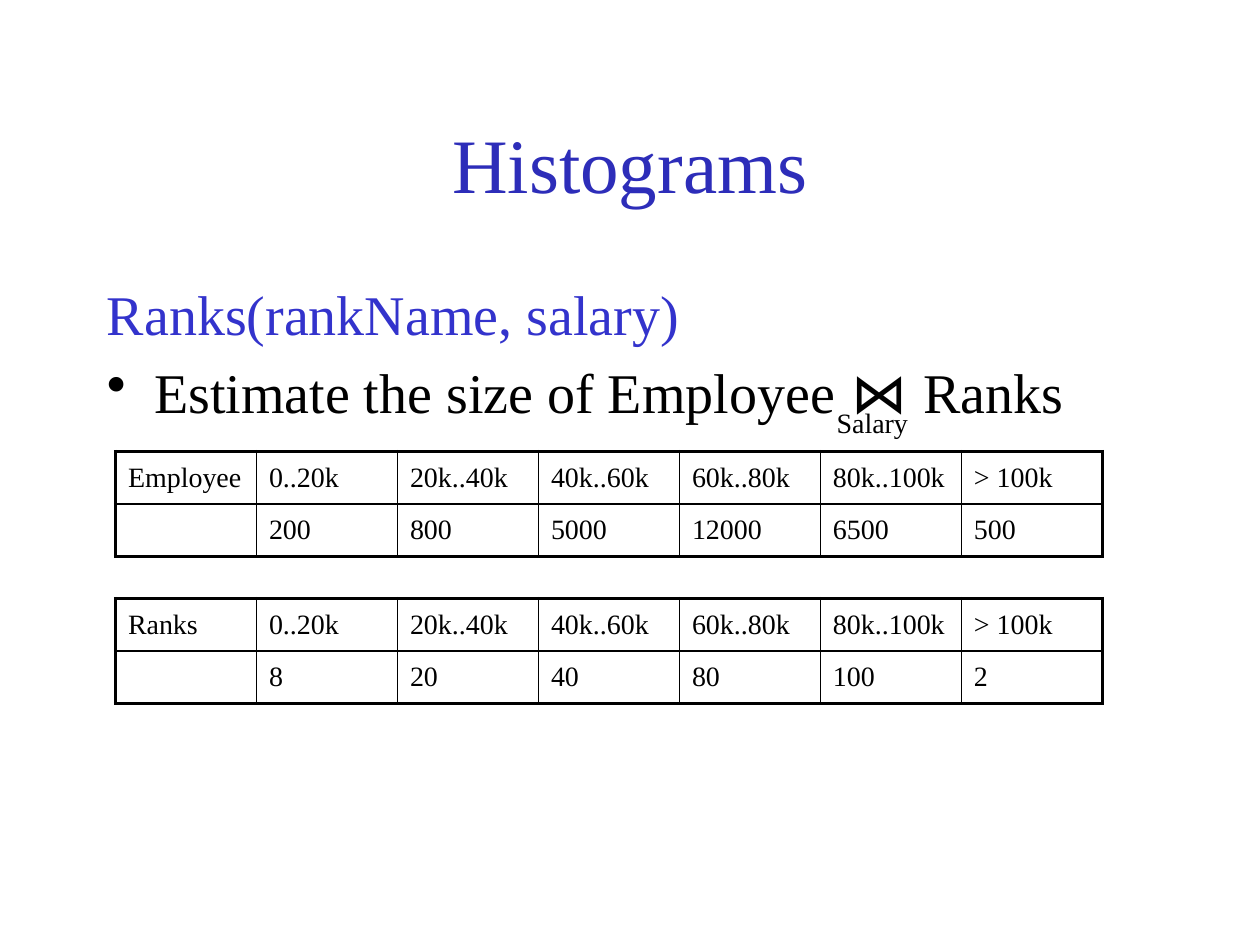
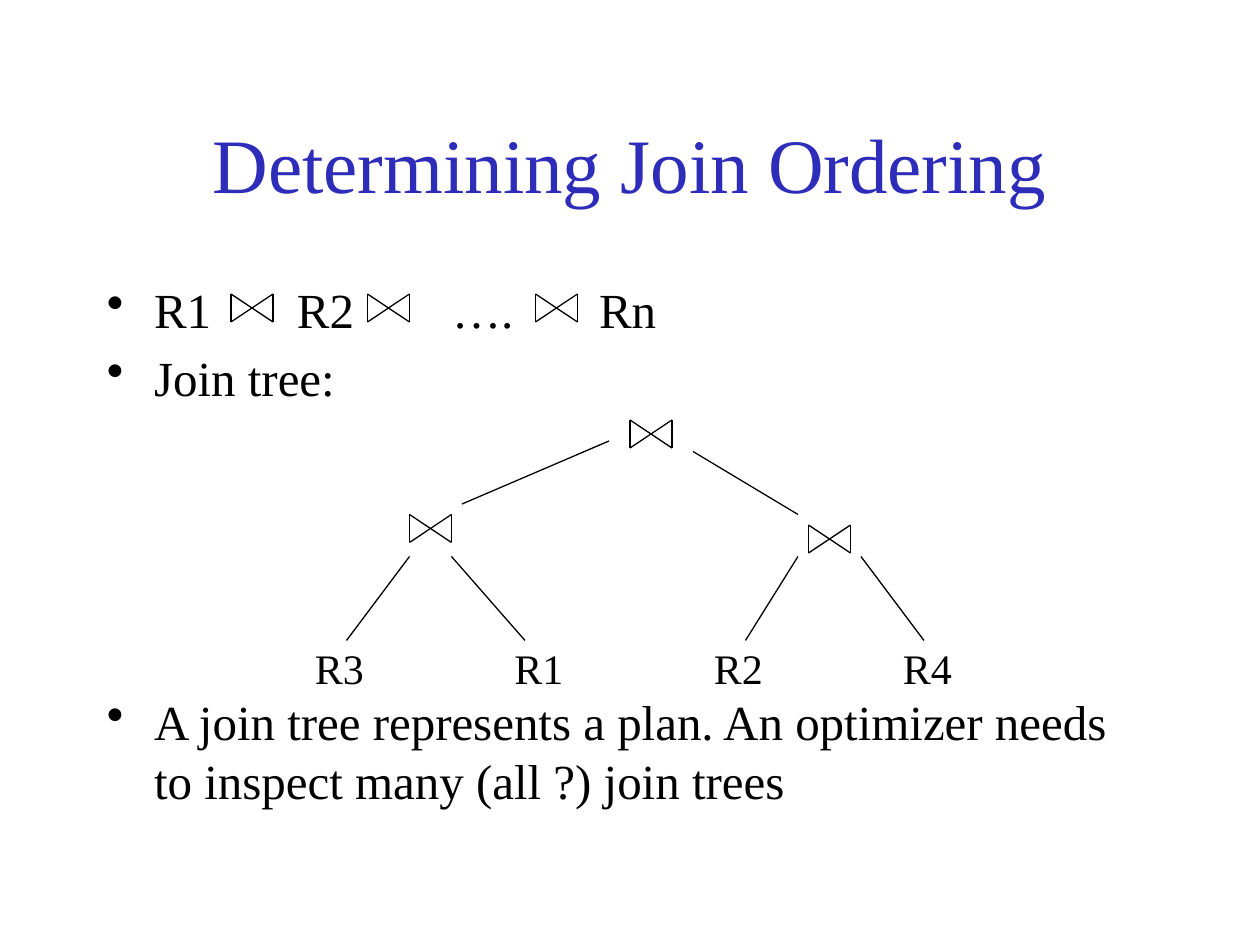
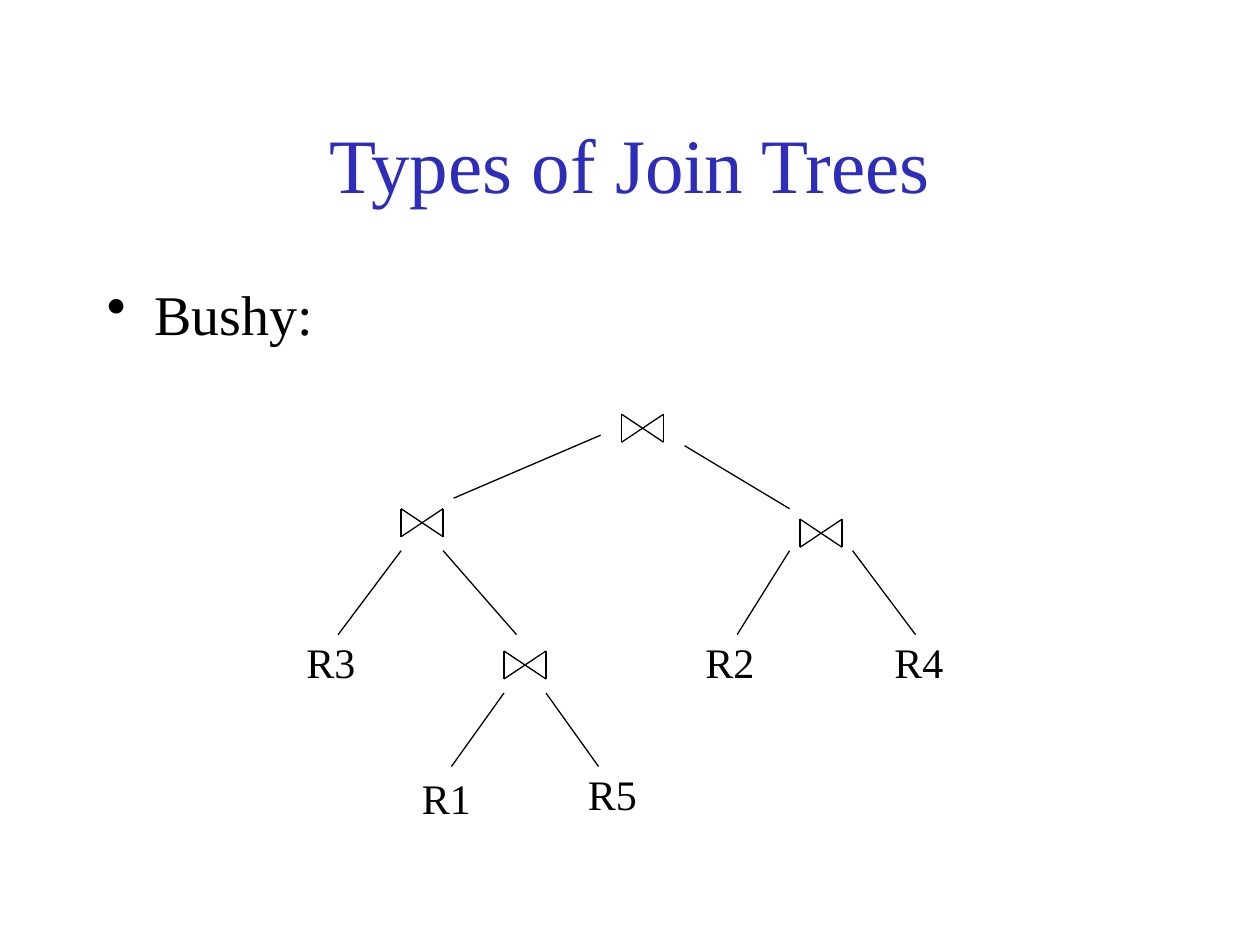
from dataclasses import dataclass
from typing import NamedTuple, Union

from lxml.etree import SubElement
from pptx import Presentation
from pptx.dml.color import RGBColor
from pptx.enum.shapes import MSO_CONNECTOR
from pptx.enum.text import MSO_ANCHOR, PP_ALIGN
from pptx.oxml.ns import qn
from pptx.shapes.shapetree import GroupShapes, SlideShapes
from pptx.slide import Slide
from pptx.util import Emu, Inches, Pt

# Shared look
TITLE_BLUE = RGBColor(0x2D, 0x2D, 0xB9)
BODY_BLUE = RGBColor(0x33, 0x33, 0xCC)
BLACK = RGBColor(0x00, 0x00, 0x00)
SERIF, SANS = "Times New Roman", "Arial"
SPACE_SHARE = 0.2  # space before a paragraph, as a share of its text size
THIN, THICK = 1, 2.25

# Grid of 120 columns and 90 rows
WIDTH, HEIGHT = Inches(10), Inches(7.5)
COLUMNS, ROWS = 120, 90
JOIN_W, JOIN_H = 4, 2.67


class Point(NamedTuple):
    col: float
    row: float

    def shifted(self, by: "Point") -> "Point":
        return Point(self.col + by.col, self.row + by.row)


class Box(NamedTuple):
    col: float
    row: float
    cols: float
    rows: float


class Run(NamedTuple):
    text: str
    font: str = SERIF
    spacing: float = 0


class Label(NamedTuple):
    text: str
    at: Point


class Edge(NamedTuple):
    start: Point
    end: Point


@dataclass
class Para:
    runs: list[Run]
    size: float
    color: RGBColor = BLACK
    bullet: bool = True
    before: float = 0


@dataclass
class JoinTree:
    joins: list[Point]
    edges: list[Edge]
    leaves: list[Label]


Shapes = Union[SlideShapes, GroupShapes]

TITLE_BOX = Box(9, 8, 102, 15)
BODY_BOX = Box(9, 26, 102, 54)


def x(cols: float) -> Emu:
    return Emu(round(WIDTH * cols / COLUMNS))


def y(rows: float) -> Emu:
    return Emu(round(HEIGHT * rows / ROWS))


def place(box: Box) -> tuple[Emu, Emu, Emu, Emu]:
    return x(box.col), y(box.row), x(box.cols), y(box.rows)


# Text
def add_run(p, run: Run, size: float, color: RGBColor = BLACK) -> None:
    r = p.add_run()
    r.text = run.text
    for name, value in {"name": run.font, "size": Pt(size), "bold": False}.items():
        setattr(r.font, name, value)
    r.font.color.rgb = color
    if run.spacing:
        r.font._element.set("spc", str(round(run.spacing * 100)))


def add_text_frame(s: Slide, box: Box, **formats):
    tf = s.shapes.add_textbox(*place(box)).text_frame
    for name, value in formats.items():
        setattr(tf, name, value)
    return tf


def add_label(s: Slide, label: Label, size: float = 24, cols: float = 7.1, rows: float = 6) -> None:
    tf = add_text_frame(s, Box(*label.at, cols, rows), word_wrap=False)
    add_run(tf.paragraphs[0], Run(label.text), size)


def add_title(s: Slide, text: str) -> None:
    tf = add_text_frame(s, TITLE_BOX, word_wrap=True, vertical_anchor=MSO_ANCHOR.MIDDLE)
    p = tf.paragraphs[0]
    p.alignment = PP_ALIGN.CENTER
    add_run(p, Run(text), 44, TITLE_BLUE)


def add_body(s: Slide, paras: list[Para]) -> None:
    tf = add_text_frame(s, BODY_BOX, word_wrap=True)
    for i, para in enumerate(paras):
        p = tf.add_paragraph() if i else tf.paragraphs[0]
        p.space_before = Pt(para.before or para.size * SPACE_SHARE)
        pPr = p._p.get_or_add_pPr()
        indent = x(4.5)
        pPr.set("marL", str(indent))
        pPr.set("indent", str(-indent))
        if para.bullet:
            SubElement(pPr, qn("a:buChar")).set("char", "•")
        for run in para.runs:
            add_run(p, run, para.size, para.color)


# Lines and joins
def add_line(shapes: Shapes, edge: Edge) -> None:
    (x1, y1), (x2, y2) = edge
    line = shapes.add_connector(MSO_CONNECTOR.STRAIGHT, x(x1), y(y1), x(x2), y(y2))
    line.line.color.rgb = BLACK
    line.line.width = Pt(0.75)
    SubElement(line._element.spPr, qn("a:effectLst"))


def add_join(s: Slide, at: Point) -> None:
    top_right, bottom_left = at.shifted(Point(JOIN_W, 0)), at.shifted(Point(0, JOIN_H))
    bottom_right = at.shifted(Point(JOIN_W, JOIN_H))
    outline = [at, bottom_right, top_right, bottom_left, at]
    group = s.shapes.add_group_shape()
    for start, end in zip(outline, outline[1:]):
        add_line(group.shapes, Edge(start, end))


def add_tree(s: Slide, tree: JoinTree, shift: Point = Point(0, 0)) -> None:
    for leaf in tree.leaves:
        add_label(s, Label(leaf.text, leaf.at.shifted(shift)))
    for join in tree.joins:
        add_join(s, join.shifted(shift))
    for edge in tree.edges:
        add_line(s.shapes, Edge(edge.start.shifted(shift), edge.end.shifted(shift)))


# Histogram table
def set_borders(cell, widths: dict[str, float]) -> None:
    tcPr = cell._tc.get_or_add_tcPr()
    for side, width in widths.items():
        ln = SubElement(tcPr, qn(f"a:ln{side}"))
        ln.set("w", str(Pt(width)))
        SubElement(SubElement(ln, qn("a:solidFill")), qn("a:srgbClr")).set("val", str(BLACK))


def add_histogram(s: Slide, row: float, rows: list[list[str]]) -> None:
    n_rows, n_cols = len(rows), len(rows[0])
    box = Box(11, row, 94, 5 * n_rows)
    table = s.shapes.add_table(n_rows, n_cols, *place(box)).table
    for name in ("first_row", "horz_banding"):
        setattr(table, name, False)
    for i, texts in enumerate(rows):
        for j, text in enumerate(texts):
            cell = table.cell(i, j)
            outer = {"L": j == 0, "R": j == n_cols - 1, "T": i == 0, "B": i == n_rows - 1}
            set_borders(cell, {side: THICK if edge else THIN for side, edge in outer.items()})
            cell.fill.background()
            cell.vertical_anchor = MSO_ANCHOR.MIDDLE
            if text:
                p = cell.text_frame.paragraphs[0]
                p.space_before = Pt(16 * SPACE_SHARE)
                add_run(p, Run(text), 16)


# Content
RANGES = ["0..20k", "20k..40k", "40k..60k", "60k..80k", "80k..100k", "> 100k"]
HISTOGRAMS = {
    "Employee": [200, 800, 5000, 12000, 6500, 500],
    "Ranks": [8, 20, 40, 80, 100, 2],
}
LEFT_LEAF, RIGHT_LEAVES = Label("R3", Point(28.8, 60.6)), [
    Label("R2", Point(66.8, 60.6)),
    Label("R4", Point(84.8, 60.6)),
]
BASE_TREE = JoinTree(
    joins=[Point(39, 49), Point(77, 50), Point(60, 40)],
    edges=[
        Edge(Point(39, 53), Point(33, 61)),
        Edge(Point(43, 53), Point(50, 61)),
        Edge(Point(76, 53), Point(71, 61)),
        Edge(Point(82, 53), Point(88, 61)),
        Edge(Point(58, 42), Point(44, 48)),
        Edge(Point(66, 43), Point(76, 49)),
    ],
    leaves=[LEFT_LEAF, *RIGHT_LEAVES],
)
FOURTH_JOIN = JoinTree(
    joins=[Point(48, 62)],
    edges=[Edge(Point(48, 66), Point(43, 73)), Edge(Point(52, 66), Point(57, 73))],
    leaves=[Label("R1", Point(39, 73)), Label("R5", Point(54.8, 72.6))],
)


def histograms_slide(s: Slide) -> None:
    add_title(s, "Histograms")
    add_body(s, [
        Para([Run("Ranks(rankName, salary)")], 32, BODY_BLUE, bullet=False),
        Para([Run("Estimate the size of Employee"), Run(" ⋈ ", SANS), Run("Ranks")], 32),
    ])
    for i, (name, counts) in enumerate(HISTOGRAMS.items()):
        add_histogram(s, 43 + 14 * i, [[name, *RANGES], ["", *map(str, counts)]])
    add_label(s, Label("Salary", Point(78.5, 38)), size=16, cols=9.2, rows=4.4)


def ordering_slide(s: Slide) -> None:
    add_title(s, "Determining Join Ordering")
    # Widened spaces leave room for the join signs
    chain = [Run("R1"), Run(" ", spacing=42), Run("R2"), Run(" ", spacing=49),
             Run("…."), Run(" ", spacing=42), Run("Rn")]
    add_body(s, [
        Para(chain, 28),
        Para([Run("Join tree:")], 28),
        Para([Run("A join tree represents a plan. An optimizer needs "
                  "to inspect many (all ?) join trees")], 28, before=163),
    ])
    add_tree(s, BASE_TREE)
    add_label(s, Label("R1", Point(47.8, 60.6)))
    for col in (22, 35, 51):
        add_join(s, Point(col, 28))


def types_slide(s: Slide) -> None:
    add_title(s, "Types of Join Trees")
    add_body(s, [Para([Run("Bushy:")], 32)])
    add_tree(s, BASE_TREE, shift=Point(-0.8, -0.55))
    add_tree(s, FOURTH_JOIN)


def main() -> None:
    prs = Presentation()
    prs.slide_width, prs.slide_height = WIDTH, HEIGHT
    for build in (histograms_slide, ordering_slide, types_slide):
        build(prs.slides.add_slide(prs.slide_layouts[6]))
    prs.save("out.pptx")


if __name__ == "__main__":
    main()
